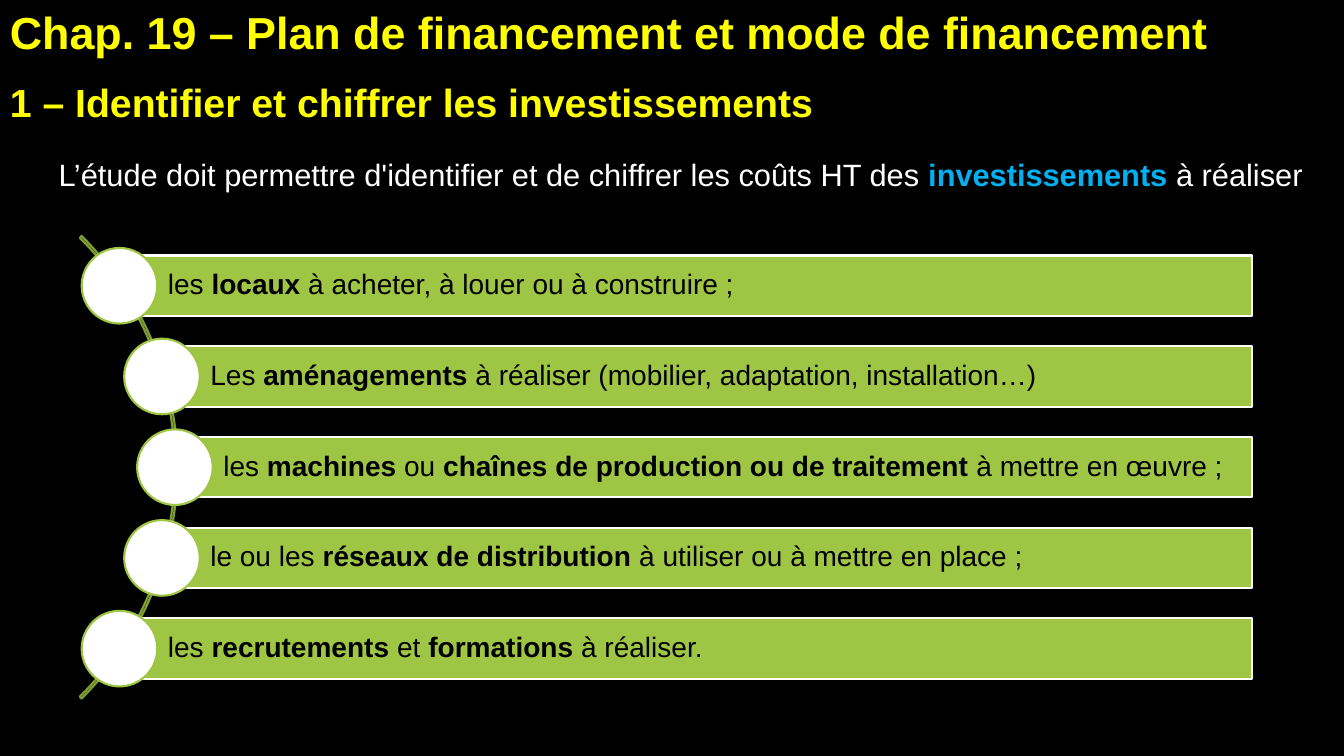
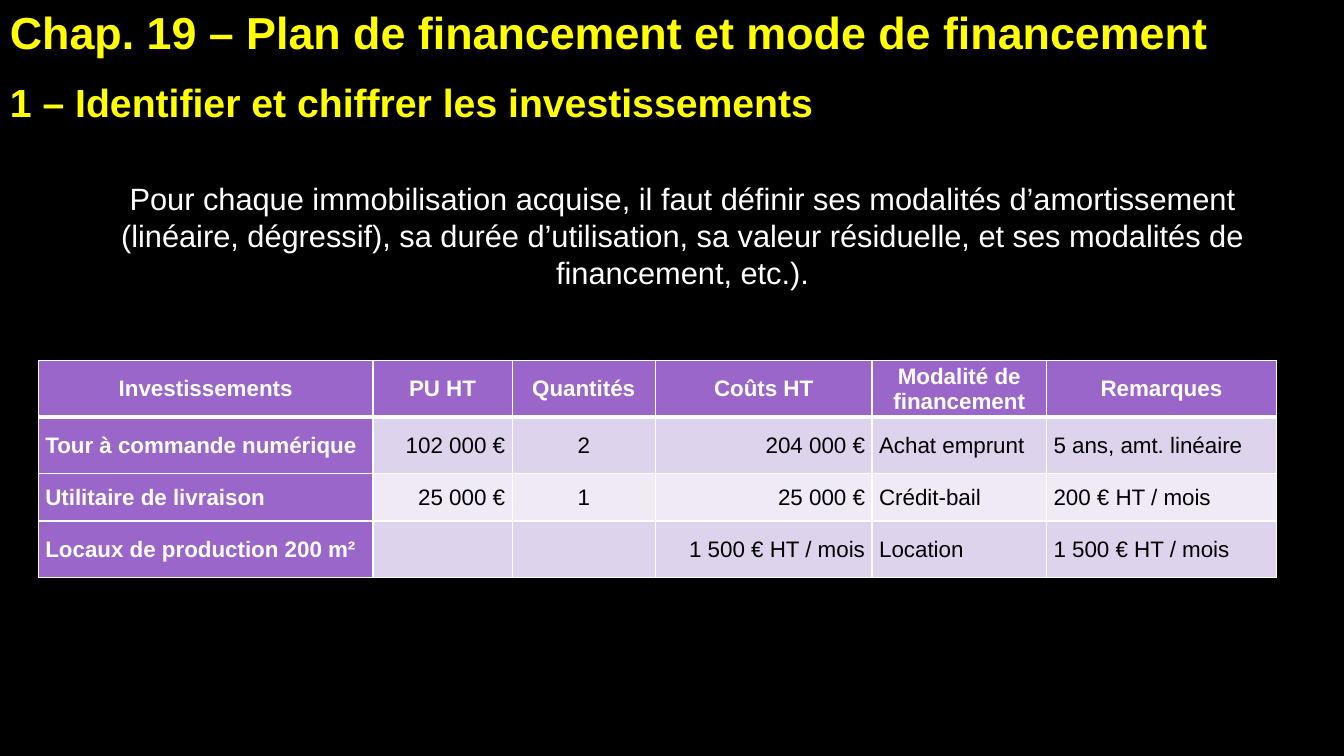
import math

import pptx
import pptx.dml.color
import pptx.enum.shapes
import pptx.enum.text
import pptx.oxml
import pptx.oxml.ns
import pptx.util

Inches, Pt = pptx.util.Inches, pptx.util.Pt
RGBColor = pptx.dml.color.RGBColor
SHAPE = pptx.enum.shapes.MSO_SHAPE
ALIGN = pptx.enum.text.PP_ALIGN
MIDDLE = pptx.enum.text.MSO_ANCHOR.MIDDLE
GROW = pptx.enum.text.MSO_AUTO_SIZE.SHAPE_TO_FIT_TEXT

BLACK = RGBColor(0x00, 0x00, 0x00)
WHITE = RGBColor(0xFF, 0xFF, 0xFF)
YELLOW = RGBColor(0xFF, 0xFF, 0x00)
BLUE = RGBColor(0x00, 0xB0, 0xF0)
GREEN = RGBColor(0x9E, 0xC5, 0x44)
DARK_GREEN = RGBColor(0x7F, 0x9E, 0x36)
PURPLE = RGBColor(0x9A, 0x66, 0xCA)
BANDS = (RGBColor(0xDE, 0xD3, 0xEC), RGBColor(0xEF, 0xEA, 0xF6))
FONT = "Arial"

# Words between asterisks are bold.
CHAPTER = "*Chap. 19 – Plan de financement et mode de financement*"
SECTION = "*1 – Identifier et chiffrer les investissements*"
STUDY = ("L’étude doit permettre d'identifier et de chiffrer les coûts HT des "
         "*investissements* à réaliser")
INVESTMENTS = [
    "les *locaux* à acheter, à louer ou à construire ;",
    "Les *aménagements* à réaliser (mobilier, adaptation, installation…)",
    "les *machines* ou *chaînes de production ou de traitement* à mettre en œuvre ;",
    "le ou les *réseaux de distribution* à utiliser ou à mettre en place ;",
    "les *recrutements* et *formations* à réaliser.",
]
ASSETS = ("Pour chaque immobilisation acquise, il faut définir ses modalités "
          "d’amortissement (linéaire, dégressif), sa durée d’utilisation, sa valeur "
          "résiduelle, et ses modalités de financement, etc.).")
COLUMNS = [  # heading, width, alignment
    ("Investissements", 3.32, ALIGN.JUSTIFY),
    ("PU HT", 1.38, ALIGN.RIGHT),
    ("Quantités", 1.42, ALIGN.CENTER),
    ("Coûts HT", 2.15, ALIGN.RIGHT),
    ("Modalité de financement", 1.73, ALIGN.JUSTIFY),
    ("Remarques", 2.28, ALIGN.JUSTIFY),
]
ROWS = [
    ("Tour à commande numérique", "102 000 €", "2", "204 000 €",
     "Achat emprunt", "5 ans, amt. linéaire"),
    ("Utilitaire de livraison", "25 000 €", "1", "25 000 €",
     "Crédit-bail", "200 € HT / mois"),
    ("Locaux de production 200 m²", "", "", "1 500 € HT / mois",
     "Location", "1 500 € HT / mois"),
]
ROW_HEIGHTS = (0.56, 0.56, 0.47, 0.56)

# Arc geometry: the discs sit along the edge of a large circle.
ARC_LEFT, ARC_TOP, ARC_SIZE = -4.73, 1.39, 6.49
ARC_X, ARC_Y = ARC_LEFT + ARC_SIZE / 2, ARC_TOP + ARC_SIZE / 2
DISC_RADIUS, DISC_ORBIT = 0.375, 3.22
BAR_RIGHT, BAR_HEIGHT, BAR_PITCH = 12.42, 0.6, 0.9


def write(p, text, size, color, align=ALIGN.LEFT, bold_color=None):
    p.alignment = align
    p.font.name, p.font.size, p.font.color.rgb = FONT, Pt(size), color
    for i, part in enumerate(text.split("*")):
        if part:
            r = p.add_run()
            r.text = part
            if i % 2:
                r.font.bold = True
                if bold_color is not None:
                    r.font.color.rgb = bold_color


def set_margins(obj, left, top, right, bottom):
    obj.margin_left, obj.margin_top = Inches(left), Inches(top)
    obj.margin_right, obj.margin_bottom = Inches(right), Inches(bottom)


def add_text(s, box, text, size, color, before, after=0, **style):
    tf = s.shapes.add_textbox(*map(Inches, box)).text_frame
    tf.word_wrap, tf.auto_size = True, GROW
    p = tf.paragraphs[0]
    p.space_before, p.space_after = Pt(before), Pt(after)
    write(p, text, size, color, **style)


def add_shape(s, kind, box, fill, line):
    sp = s.shapes.add_shape(kind, *map(Inches, box))
    sp.shadow.inherit = False
    if fill is None:
        sp.fill.background()
    else:
        sp.fill.solid()
        sp.fill.fore_color.rgb = fill
    sp.line.color.rgb, sp.line.width = line, Pt(1.5)
    return sp


def add_slide(prs):
    """Add a slide with the chapter and section headings."""
    s = prs.slides.add_slide(prs.slide_layouts[6])
    add_text(s, (0, 0, 13.13, 0.64), CHAPTER, 32, YELLOW, 3, 3)
    add_text(s, (0, 0.73, 12.11, 0.57), SECTION, 28, YELLOW, 12, 6)
    return s


def add_investment_list(s):
    arc = add_shape(s, SHAPE.BLOCK_ARC, (ARC_LEFT, ARC_TOP, ARC_SIZE, ARC_SIZE),
                    None, DARK_GREEN)
    for i, value in enumerate((189, 27, 0.004)):
        arc.adjustments[i] = value
    for i, text in enumerate(INVESTMENTS):
        dy = (i - (len(INVESTMENTS) - 1) / 2) * BAR_PITCH
        x, y = ARC_X + math.sqrt(DISC_ORBIT ** 2 - dy ** 2), ARC_Y + dy
        bar = add_shape(s, SHAPE.RECTANGLE,
                        (x, y - BAR_HEIGHT / 2, BAR_RIGHT - x, BAR_HEIGHT), GREEN, WHITE)
        tf = bar.text_frame
        tf.word_wrap, tf.vertical_anchor = True, MIDDLE
        set_margins(tf, 0.48, 0.06, 0.06, 0.06)
        tf.paragraphs[0].line_spacing = 0.9
        write(tf.paragraphs[0], text, 20, BLACK)
        add_shape(s, SHAPE.OVAL, (x - DISC_RADIUS, y - DISC_RADIUS,
                                  2 * DISC_RADIUS, 2 * DISC_RADIUS), WHITE, GREEN)


def add_borders(cell, **widths):
    tc_pr = cell._tc.get_or_add_tcPr()
    for side in "LRTB":
        tc_pr.append(pptx.oxml.parse_xml(
            f'<a:ln{side} {pptx.oxml.ns.nsdecls("a")} w="{Pt(widths.get(side, 1))}">'
            f'<a:solidFill><a:srgbClr val="{WHITE}"/></a:solidFill></a:ln{side}>'))


def add_investment_table(s):
    headings, widths, aligns = zip(*COLUMNS)
    rows = [headings] + ROWS
    table = s.shapes.add_table(len(rows), len(COLUMNS), Inches(0.38), Inches(3.58),
                               Inches(sum(widths)), Inches(sum(ROW_HEIGHTS))).table
    for column, width in zip(table.columns, widths):
        column.width = Inches(width)
    for i, row in enumerate(rows):
        table.rows[i].height = Inches(ROW_HEIGHTS[i])
        for j, text in enumerate(row):
            cell = table.cell(i, j)
            is_heading = i == 0 or j == 0
            add_borders(cell, T=3 if i == 1 else 1, B=3 if i == 0 else 1)
            cell.fill.solid()
            cell.fill.fore_color.rgb = PURPLE if is_heading else BANDS[(i - 1) % 2]
            cell.vertical_anchor = MIDDLE
            set_margins(cell, 0.07, 0, 0.07, 0)
            write(cell.text_frame.paragraphs[0], f"*{text}*" if is_heading else text, 16,
                  WHITE if is_heading else BLACK, aligns[j] if i else ALIGN.CENTER)


def main():
    prs = pptx.Presentation()
    prs.slide_width, prs.slide_height = Inches(13.33), Inches(7.5)
    background = prs.slide_master.background.fill
    background.solid()
    background.fore_color.rgb = BLACK

    s = add_slide(prs)
    add_text(s, (0.46, 1.5, 12.58, 0.84), STUDY, 22, WHITE, 24,
             align=ALIGN.CENTER, bold_color=BLUE)
    add_investment_list(s)

    s = add_slide(prs)
    add_text(s, (0.76, 1.73, 12.02, 1.21), ASSETS, 22, WHITE, 12, align=ALIGN.CENTER)
    add_investment_table(s)

    prs.save("out.pptx")


if __name__ == "__main__":
    main()
